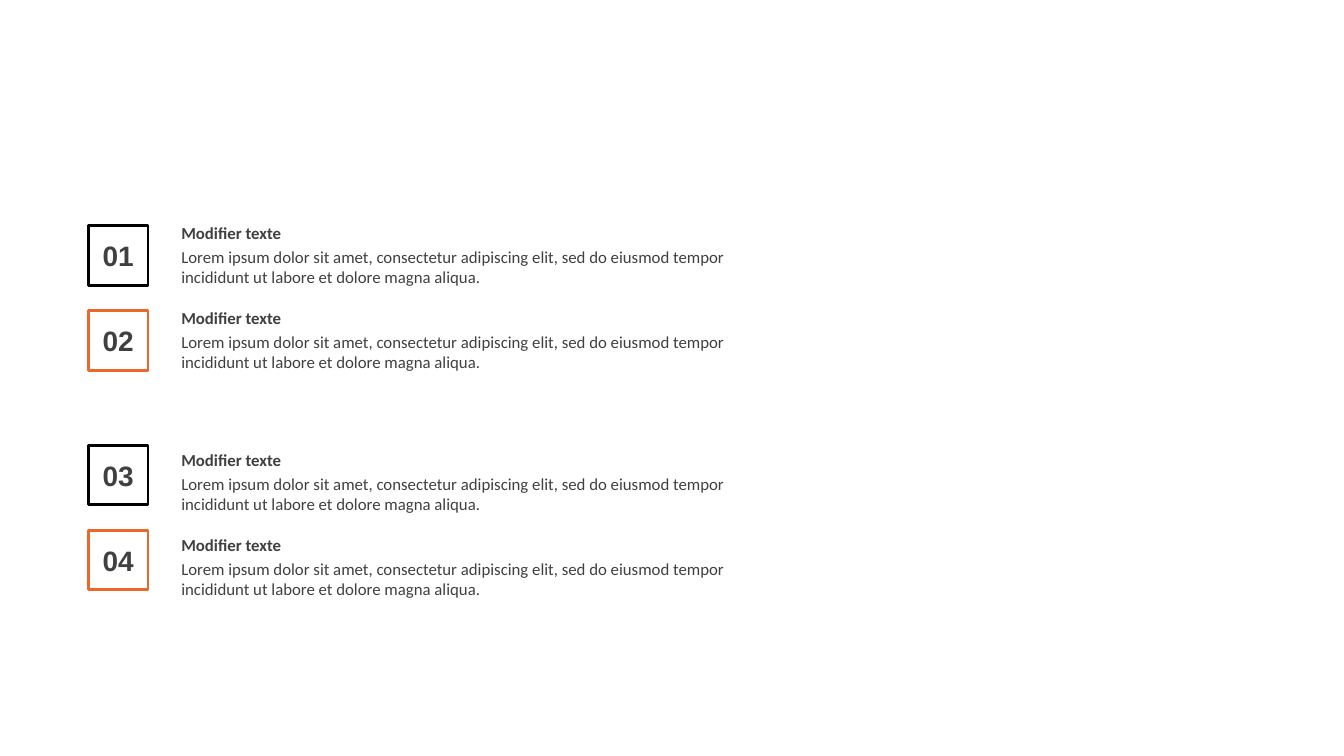
"""Build a slide listing four numbered text items in two pairs."""
from dataclasses import dataclass

import pptx
import pptx.dml.color
import pptx.enum.shapes
import pptx.enum.text
import pptx.shapes.shapetree
import pptx.util

Cm = pptx.util.Cm
Pt = pptx.util.Pt
RGBColor = pptx.dml.color.RGBColor
Align = pptx.enum.text.PP_ALIGN
Anchor = pptx.enum.text.MSO_ANCHOR


@dataclass(frozen=True)
class Theme:
    text: RGBColor = RGBColor(0x40, 0x40, 0x40)
    black: RGBColor = RGBColor(0x00, 0x00, 0x00)
    orange: RGBColor = RGBColor(0xEC, 0x67, 0x2A)
    text_font: str = "Calibri"
    number_font: str = "Arial"
    text_size: int = 12
    number_size: int = 20
    outline_width: int = 2


@dataclass(frozen=True)
class Pair:
    square_top: float
    heading_top: float


@dataclass(frozen=True)
class Box:
    left: float
    top: float
    width: float
    height: float


THEME = Theme()
PAIRS = (Pair(5.69, 5.5), Pair(11.22, 11.22))
OUTLINES = (THEME.black, THEME.orange)
ITEM_STEP = 2.14
SQUARE_LEFT, SQUARE_SIDE = 2.23, 1.5
NUMBER_WIDTH, NUMBER_HEIGHT = 1.3, 1.11
TEXT_LEFT, TEXT_WIDTH = 4.32, 14.2
HEADING_HEIGHT, BODY_HEIGHT, BODY_OFFSET = 0.77, 1.28, 0.6
HEADING = "Modifier texte"
BODY = (
    "Lorem ipsum dolor sit amet, consectetur adipiscing elit, sed do eiusmod tempor "
    "incididunt ut labore et dolore magna aliqua."
)


def add_text(
    shapes: pptx.shapes.shapetree._BaseGroupShapes,
    box: Box,
    text: str,
    font_name: str,
    size: int,
    bold: bool = False,
    centred: bool = False,
) -> None:
    shape = shapes.add_textbox(Cm(box.left), Cm(box.top), Cm(box.width), Cm(box.height))
    frame = shape.text_frame
    frame.word_wrap = True
    frame.auto_size = pptx.enum.text.MSO_AUTO_SIZE.SHAPE_TO_FIT_TEXT
    paragraph = frame.paragraphs[0]
    paragraph.text = text
    if centred:
        frame.margin_left = frame.margin_right = Cm(0)
        frame.vertical_anchor = Anchor.MIDDLE
        paragraph.alignment = Align.CENTER
    paragraph.font.name = font_name
    paragraph.font.size = Pt(size)
    paragraph.font.bold = bold
    paragraph.font.color.rgb = THEME.text


def add_number(
    shapes: pptx.shapes.shapetree.SlideShapes, number: int, top: float, outline: RGBColor
) -> None:
    square = shapes.add_shape(
        pptx.enum.shapes.MSO_SHAPE.RECTANGLE,
        Cm(SQUARE_LEFT), Cm(top), Cm(SQUARE_SIDE), Cm(SQUARE_SIDE),
    )
    square.shadow.inherit = False
    square.fill.background()
    square.line.color.rgb = outline
    square.line.width = Pt(THEME.outline_width)
    label = Box(
        SQUARE_LEFT + (SQUARE_SIDE - NUMBER_WIDTH) / 2,
        top + (SQUARE_SIDE - NUMBER_HEIGHT) / 2,
        NUMBER_WIDTH,
        NUMBER_HEIGHT,
    )
    add_text(shapes, label, f"{number:02d}", THEME.number_font, THEME.number_size,
             bold=True, centred=True)


def add_description(shapes: pptx.shapes.shapetree.SlideShapes, top: float) -> None:
    group = shapes.add_group_shape()
    body = Box(TEXT_LEFT, top + BODY_OFFSET, TEXT_WIDTH, BODY_HEIGHT)
    heading = Box(TEXT_LEFT, top, TEXT_WIDTH, HEADING_HEIGHT)
    add_text(group.shapes, body, BODY, THEME.text_font, THEME.text_size)
    add_text(group.shapes, heading, HEADING, THEME.text_font, THEME.text_size, bold=True)


def main() -> None:
    presentation = pptx.Presentation()
    presentation.slide_width = Cm(33.87)
    presentation.slide_height = Cm(19.05)
    slide = presentation.slides.add_slide(presentation.slide_layouts[6])
    for pair_index, pair in enumerate(PAIRS):
        for row, outline in enumerate(OUTLINES):
            number = pair_index * len(OUTLINES) + row + 1
            add_number(slide.shapes, number, pair.square_top + row * ITEM_STEP, outline)
            add_description(slide.shapes, pair.heading_top + row * ITEM_STEP)
    presentation.save("out.pptx")


if __name__ == "__main__":
    main()
